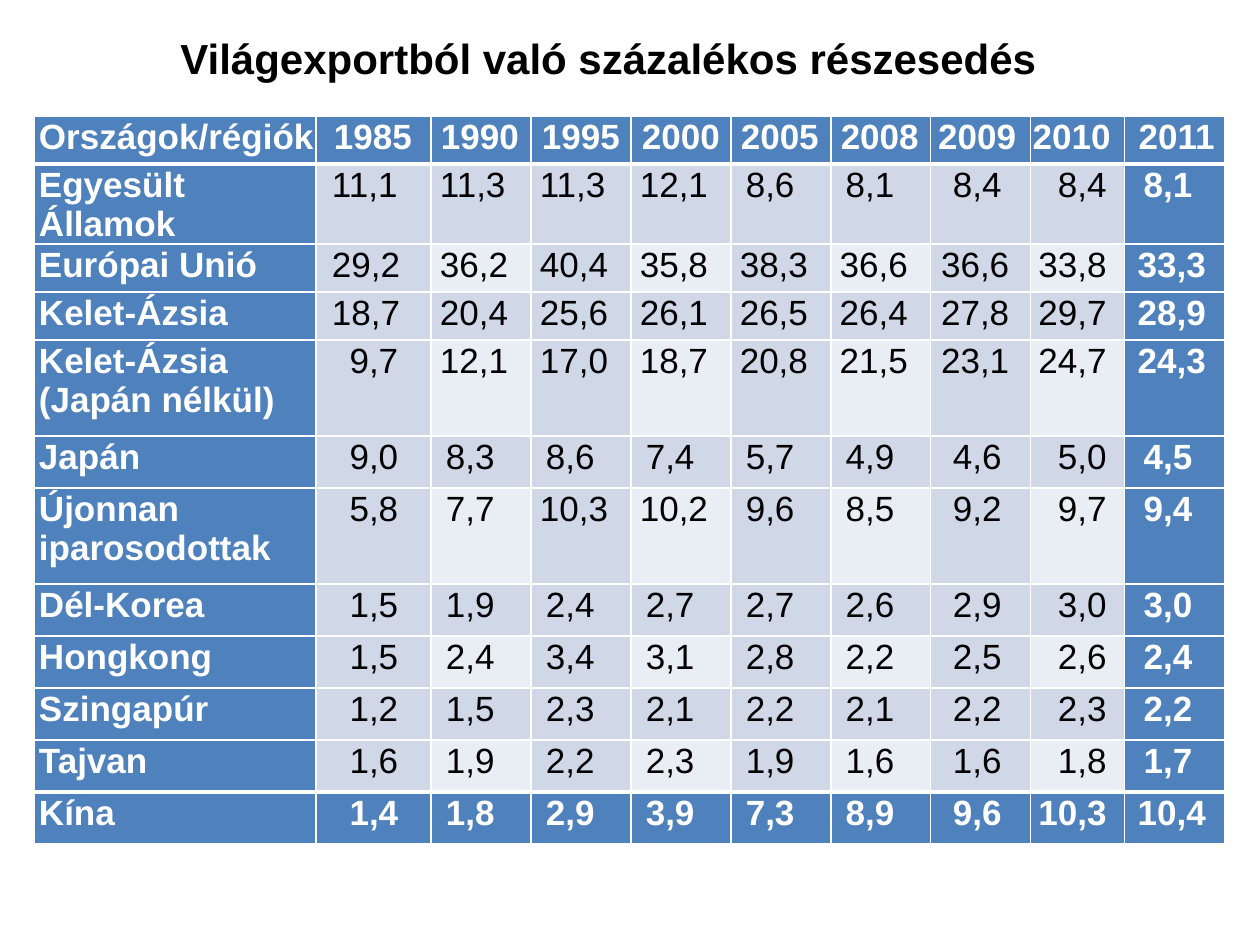
from dataclasses import dataclass

from lxml.etree import SubElement
from pptx import Presentation
from pptx.dml.color import RGBColor
from pptx.enum.text import MSO_AUTO_SIZE, PP_ALIGN
from pptx.oxml.ns import qn
from pptx.util import Emu, Pt

COLORS = {
    "white": "FFFFFF",
    "black": "000000",
    "blue": "4F81BD",
    "band": "D0D8E8",
    "light": "E9EDF4",
}
TABLE_LEFT, TABLE_TOP = 34, 116
COLUMN_WIDTHS = [282, 115] + [100] * 6 + [94, 100]
YEARS = "1985 1990 1995 2000 2005 2008 2009 2010 2011"
HEADER_INDENTS = [5, 18, 10, 11, 11, 10, 10, 7, 0, 14]
CENTERED_YEAR, RIGHT_YEAR = 7, 8
TEXT_TOP_MARGIN = 2


@dataclass
class TableRow:
    label: str
    values: str
    height: int


@dataclass
class TextPlacement:
    left: int
    right: int = 0
    align: PP_ALIGN = PP_ALIGN.LEFT


ROWS = [
    TableRow("Országok/régiók", YEARS, 48),
    TableRow("Egyesült Államok", "11,1 11,3 11,3 12,1 8,6 8,1 8,4 8,4 8,1", 48),
    TableRow("Európai Unió", "29,2 36,2 40,4 35,8 38,3 36,6 36,6 33,8 33,3", 48),
    TableRow("Kelet-Ázsia", "18,7 20,4 25,6 26,1 26,5 26,4 27,8 29,7 28,9", 48),
    TableRow("Kelet-Ázsia (Japán nélkül)", "9,7 12,1 17,0 18,7 20,8 21,5 23,1 24,7 24,3", 96),
    TableRow("Japán", "9,0 8,3 8,6 7,4 5,7 4,9 4,6 5,0 4,5", 52),
    TableRow("Újonnan iparosodottak", "5,8 7,7 10,3 10,2 9,6 8,5 9,2 9,7 9,4", 96),
    TableRow("Dél-Korea", "1,5 1,9 2,4 2,7 2,7 2,6 2,9 3,0 3,0", 52),
    TableRow("Hongkong", "1,5 2,4 3,4 3,1 2,8 2,2 2,5 2,6 2,4", 52),
    TableRow("Szingapúr", "1,2 1,5 2,3 2,1 2,2 2,1 2,2 2,3 2,2", 52),
    TableRow("Tajvan", "1,6 1,9 2,2 2,3 1,9 1,6 1,6 1,8 1,7", 52),
    TableRow("Kína", "1,4 1,8 2,9 3,9 7,3 8,9 9,6 10,3 10,4", 52),
]
LAST_ROW, LAST_COLUMN = len(ROWS) - 1, len(COLUMN_WIDTHS) - 1


def px(length: int) -> Emu:
    return Emu(round(length * 914400 / 126))


def write_text(text_frame, text: str, *, size: int, color: str, bold: bool = False,
               placement: TextPlacement = TextPlacement(0)) -> None:
    paragraph = text_frame.paragraphs[0]
    paragraph.alignment = placement.align
    properties = paragraph._p.get_or_add_pPr()
    properties.set("marL", str(px(placement.left)))
    properties.set("marR", str(px(placement.right)))
    properties.set("indent", "0")
    run = paragraph.add_run()
    run.text = text
    run.font.name = "Arial"
    run.font.size = Pt(size)
    run.font.bold = bold
    run.font.color.rgb = RGBColor.from_string(COLORS[color])


def set_borders(cell, **widths: int) -> None:
    """Draw white borders; widths are in points."""
    properties = cell._tc.get_or_add_tcPr()
    for position, side in enumerate(("L", "R", "T", "B")):
        line = SubElement(properties, qn(f"a:ln{side}"), w=str(Pt(widths.get(side, 1))))
        fill = SubElement(line, qn("a:solidFill"))
        SubElement(fill, qn("a:srgbClr"), val=COLORS["white"])
        properties.insert(position, line)


def place_text(row: int, column: int, text: str) -> TextPlacement:
    single_digit = len(text) == 3
    if column == RIGHT_YEAR:
        return TextPlacement(0, 14 if row == 0 else 18, PP_ALIGN.RIGHT)
    if column == CENTERED_YEAR:
        left = 3 if len(text) == 4 and row else 7
        return TextPlacement(left, 14, PP_ALIGN.CENTER)
    if row == 0 or column == 0:
        return TextPlacement(HEADER_INDENTS[column])
    if column == 1:
        return TextPlacement(21, 20, PP_ALIGN.CENTER) if single_digit else TextPlacement(16)
    base = 13 if column == LAST_COLUMN else 9
    return TextPlacement(base + 6 if single_digit else base)


def fill_name(row: int, column: int) -> str:
    if row in (0, LAST_ROW) or column in (0, LAST_COLUMN):
        return "blue"
    return "light" if row % 2 == 0 and column % 2 == 0 else "band"


def draw_cell(cell, row: int, column: int, text: str) -> None:
    cell.margin_left = cell.margin_right = cell.margin_bottom = 0
    cell.margin_top = px(TEXT_TOP_MARGIN)
    fill = fill_name(row, column)
    cell.fill.solid()
    cell.fill.fore_color.rgb = RGBColor.from_string(COLORS[fill])
    set_borders(cell, T=3 if row in (1, LAST_ROW) else 1,
                B=3 if row in (0, LAST_ROW - 1) else 1)
    emphasized = fill == "blue"
    write_text(cell.text_frame, text, size=20, bold=emphasized,
               color="white" if emphasized else "black",
               placement=place_text(row, column, text))


def draw_table(slide) -> None:
    frame = slide.shapes.add_table(
        len(ROWS), len(COLUMN_WIDTHS), px(TABLE_LEFT), px(TABLE_TOP),
        px(sum(COLUMN_WIDTHS)), px(sum(row.height for row in ROWS)))
    table = frame.table
    table.first_row = table.horz_banding = False
    for column, width in zip(table.columns, COLUMN_WIDTHS):
        column.width = px(width)
    for row_index, row in enumerate(ROWS):
        table.rows[row_index].height = px(row.height)
        for column_index, text in enumerate([row.label, *row.values.split()]):
            draw_cell(table.cell(row_index, column_index), row_index, column_index, text)


def draw_title(slide) -> None:
    shape = slide.shapes.add_textbox(px(168), px(26), px(1038), px(63))
    shape.text_frame.word_wrap = True
    shape.text_frame.auto_size = MSO_AUTO_SIZE.SHAPE_TO_FIT_TEXT
    write_text(shape.text_frame, "Világexportból való százalékos részesedés",
               size=24, color="black", bold=True)


def main() -> None:
    presentation = Presentation()
    presentation.slide_width, presentation.slide_height = px(1260), px(945)
    slide = presentation.slides.add_slide(presentation.slide_layouts[6])

    # Export shares by region and year
    draw_table(slide)
    # Heading
    draw_title(slide)

    presentation.save("out.pptx")


if __name__ == "__main__":
    main()
